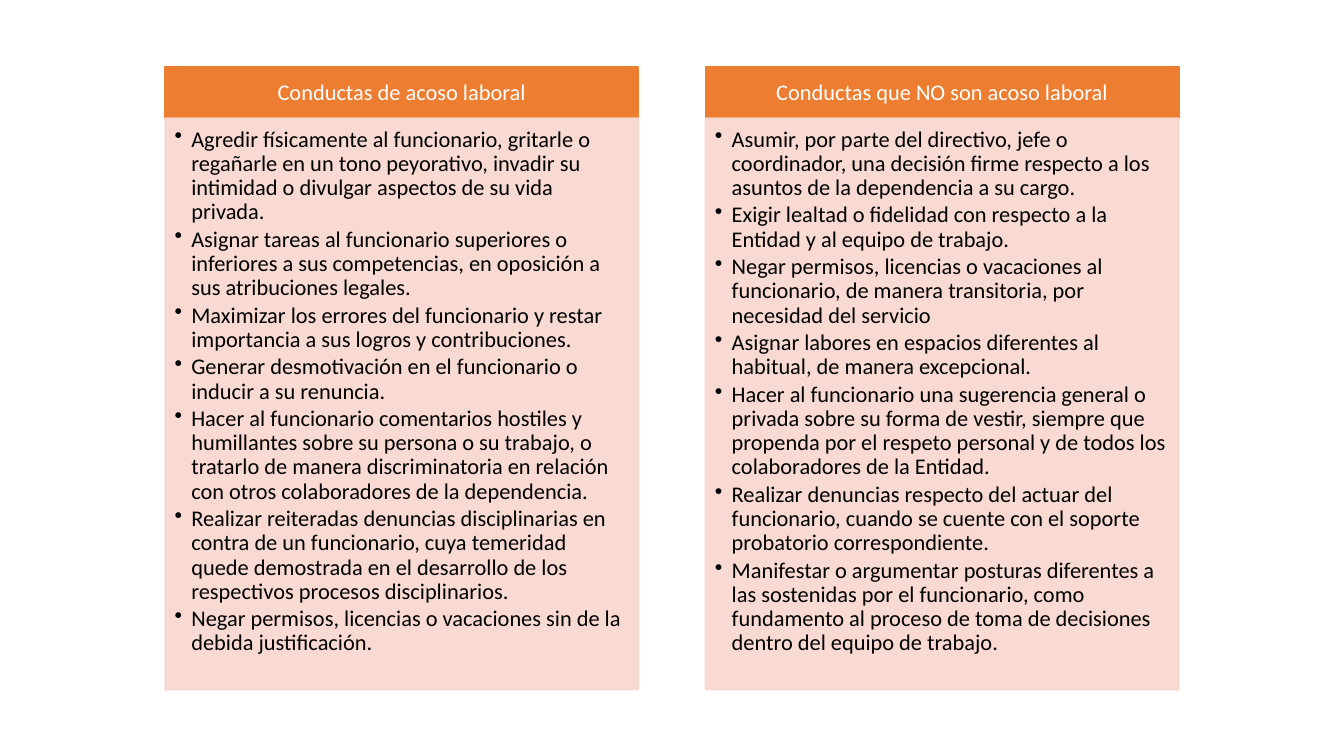
from lxml.etree import SubElement as Sub
from pptx import Presentation
from pptx.dml.color import RGBColor
from pptx.enum.shapes import MSO_SHAPE as Kind
from pptx.enum.text import MSO_ANCHOR as Anchor, PP_ALIGN as Align
from pptx.oxml.ns import qn
from pptx.util import Pt

LEFT, TOP, WIDTH, STEP = 88.5, 36, 253.5, 289.5
HEAD, BODY = 27.4, 306

COLUMNS = [
    ("Conductas de acoso laboral", [
        "Agredir físicamente al funcionario, gritarle o regañarle en un tono peyorativo, invadir su intimidad o divulgar aspectos de su vida privada.",
        "Asignar tareas al funcionario superiores o inferiores a sus competencias, en oposición a sus atribuciones legales.",
        "Maximizar los errores del funcionario y restar importancia a sus logros y contribuciones.",
        "Generar desmotivación en el funcionario o inducir a su renuncia.",
        "Hacer al funcionario comentarios hostiles y humillantes sobre su persona o su trabajo, o tratarlo de manera discriminatoria en relación con otros colaboradores de la dependencia.",
        "Realizar reiteradas denuncias disciplinarias en contra de un funcionario, cuya temeridad quede demostrada en el desarrollo de los respectivos procesos disciplinarios.",
        "Negar permisos, licencias o vacaciones sin de la debida justificación.",
    ]),
    ("Conductas que NO son acoso laboral", [
        "Asumir, por parte del directivo, jefe o coordinador, una decisión firme respecto a los asuntos de la dependencia a su cargo.",
        "Exigir lealtad o fidelidad con respecto a la Entidad y al equipo de trabajo.",
        "Negar permisos, licencias o vacaciones al funcionario, de manera transitoria, por necesidad del servicio",
        "Asignar labores en espacios diferentes al habitual, de manera excepcional.",
        "Hacer al funcionario una sugerencia general o privada sobre su forma de vestir, siempre que propenda por el respeto personal y de todos los colaboradores de la Entidad.",
        "Realizar denuncias respecto del actuar del funcionario, cuando se cuente con el soporte probatorio correspondiente.",
        "Manifestar o argumentar posturas diferentes a las sostenidas por el funcionario, como fundamento al proceso de toma de decisiones dentro del equipo de trabajo.",
    ]),
]


def paint(color, code):
    color.rgb = RGBColor.from_string(code)


class Page:
    font, size = "Calibri", 12
    accent, tint, light, dark = "ED7D31", "F8D7CE", "FFFFFF", "000000"

    def __init__(self, slide):
        self.slide = slide

    def box(self, x, y, w, h, code, pads, anchor):
        shape = self.slide.shapes.add_shape(Kind.RECTANGLE, Pt(x), Pt(y), Pt(w), Pt(h))
        shape.shadow.inherit = False
        shape.fill.solid()
        paint(shape.fill.fore_color, code)
        paint(shape.line.color, code)
        shape.line.width = Pt(1)
        frame = shape.text_frame
        frame.word_wrap = True
        frame.vertical_anchor = anchor
        (frame.margin_left, frame.margin_top,
         frame.margin_right, frame.margin_bottom) = map(Pt, pads)
        return shape

    def fade(self, shape, share):
        for node in shape.element.spPr.iter(qn("a:srgbClr")):
            Sub(node, qn("a:alpha"), val=str(share * 1000))

    def label(self, para, text, code, align, after):
        para.alignment = align
        para.line_spacing = 0.9
        para.space_after = Pt(after)
        run = para.add_run()
        run.text = text
        run.font.name = self.font
        run.font.size = Pt(self.size)
        paint(run.font.color, code)

    def bullet(self, para):
        para.level = 1
        props = para._p.get_or_add_pPr()
        props.set("marL", str(Pt(9)))
        props.set("indent", str(Pt(-9)))
        Sub(props, qn("a:buChar"), char="•")

    def header(self, x, text):
        shape = self.box(x, TOP, WIDTH, HEAD, self.accent, (6.7, 3.8, 6.7, 3.8), Anchor.MIDDLE)
        self.label(shape.text_frame.paragraphs[0], text, self.light, Align.CENTER, 4.2)

    def panel(self, x, items):
        shape = self.box(x, TOP + HEAD, WIDTH, BODY, self.tint, (5, 5, 6.7, 7.5), Anchor.TOP)
        self.fade(shape, 90)
        frame = shape.text_frame
        for i, text in enumerate(items):
            para = frame.add_paragraph() if i else frame.paragraphs[0]
            self.bullet(para)
            self.label(para, text, self.dark, Align.LEFT, 1.8)


def main():
    deck = Presentation()
    deck.slide_width, deck.slide_height = Pt(720), Pt(405)
    page = Page(deck.slides.add_slide(deck.slide_layouts[6]))
    for i, (title, items) in enumerate(COLUMNS):
        x = LEFT + i * STEP
        page.header(x, title)
        page.panel(x, items)
    deck.save("out.pptx")


if __name__ == "__main__":
    main()
